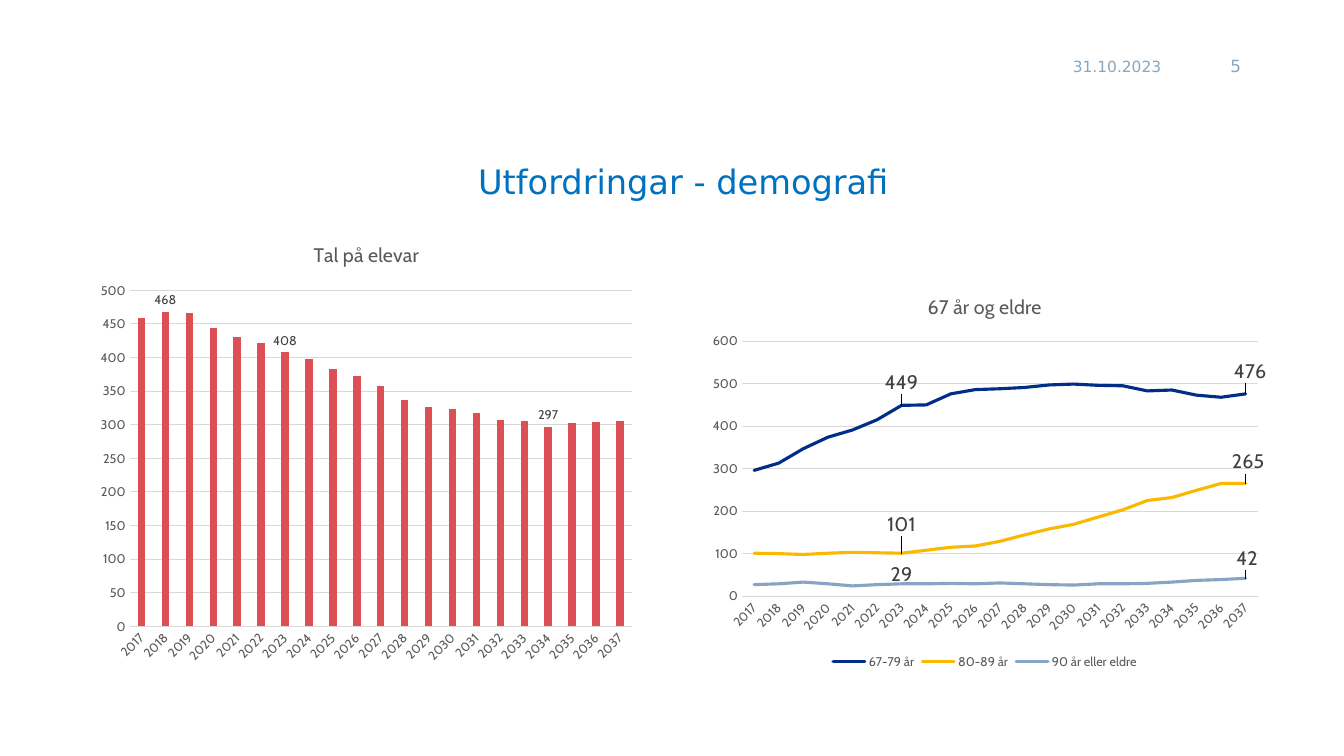
from dataclasses import dataclass, field

from lxml import etree
from pptx import Presentation
from pptx import util as u
from pptx.chart import data as cd
from pptx.dml import color as co
from pptx.enum import chart as ch
from pptx.enum import text as tx
from pptx.oxml import ns

CELL = u.Inches(0.1)
COLS, ROWS = 133.33, 75
GREY, RULE, DARK, SOFT = "595959", "D9D9D9", "404040", "86A7C2"
SANS, CABIN = "DejaVu Sans", "Cabin"
YEARS = [str(y) for y in range(2017, 2038)]
C15 = "http://schemas.microsoft.com/office/drawing/2012/chart"


@dataclass
class Box:
    col: float
    row: float
    wide: float
    high: float

    def place(self) -> tuple:
        return tuple(round(n * CELL) for n in (self.col, self.row, self.wide, self.high))

    def share(self, part: "Box") -> dict:
        return {"x": (part.col - self.col) / self.wide, "y": (part.row - self.row) / self.high,
                "w": part.wide / self.wide, "h": part.high / self.high}


@dataclass
class Mark:
    year: int
    dx: float = 0
    dy: float = 0


@dataclass
class Line:
    name: str
    hue: str
    vals: list = field(default_factory=list)
    marks: list = field(default_factory=list)


@dataclass
class Graph:
    title: str
    box: Box
    plot: Box
    kind: ch.XL_CHART_TYPE
    top: int
    step: int
    size: int
    spot: ch.XL_LABEL_POSITION
    lines: list


def paint(hue: str) -> co.RGBColor:
    return co.RGBColor.from_string(hue)


def style(font, size: float, hue: str, face: str) -> None:
    font.size, font.name, font.bold = u.Pt(size), face, False
    font.color.rgb = paint(hue)


def write(shape, words: str, size: float, hue: str, align, anchor) -> None:
    frame = shape.text_frame
    frame.word_wrap = True
    frame.vertical_anchor = anchor
    par = frame.paragraphs[0]
    par.text, par.alignment = words, align
    style(par.font, size, hue, SANS)


def layout(names: dict) -> etree._Element:
    root = etree.Element(ns.qn("c:layout"))
    hand = etree.SubElement(root, ns.qn("c:manualLayout"))
    for name, val in names.items():
        etree.SubElement(hand, ns.qn("c:" + name)).set("val", str(val))
    return root


def label(ser, line: Line, graph: Graph) -> None:
    ser.data_labels.show_value = False
    for mark in line.marks:
        spot = mark.year - 2017
        tag = ser.points[spot].data_label
        style(tag.font, graph.size, DARK, CABIN)
        tag.position = graph.spot
        if mark.dy:
            idx = ser._element.xpath(f'c:dLbls/c:dLbl/c:idx[@val="{spot}"]')[0]
            idx.addnext(layout({"x": mark.dx / graph.box.wide, "y": mark.dy / graph.box.high}))
    more = etree.SubElement(ser.data_labels._element, ns.qn("c:extLst"))
    ext = etree.SubElement(more, ns.qn("c:ext"), nsmap={"c15": C15})
    ext.set("uri", "{CE6537A1-D6FC-4f65-9D91-7224C49458BB}")
    etree.SubElement(ext, f"{{{C15}}}showLeaderLines").set("val", "1")


def axes(chart, graph: Graph) -> None:
    cat, val = chart.category_axis, chart.value_axis
    for axis in (cat, val):
        axis.major_tick_mark = axis.minor_tick_mark = ch.XL_TICK_MARK.NONE
        style(axis.tick_labels.font, 9, GREY, CABIN)
    cat.format.line.color.rgb = paint(RULE)
    cat.format.line.width = u.Pt(0.75)
    cat._element.find(ns.qn("c:txPr")).find(ns.qn("a:bodyPr")).set("rot", "-2700000")
    val.format.line.fill.background()
    val.minimum_scale, val.maximum_scale, val.major_unit = 0, graph.top, graph.step
    val.tick_labels.number_format = "0"
    val.tick_labels.number_format_is_linked = False
    grid = val.major_gridlines.format.line
    grid.color.rgb, grid.width = paint(RULE), u.Pt(0.75)


def draw(slide, graph: Graph) -> None:
    data = cd.CategoryChartData()
    data.categories = YEARS
    for line in graph.lines:
        data.add_series(line.name, line.vals)
    chart = slide.shapes.add_chart(graph.kind, *graph.box.place(), data).chart
    style(chart.font, 10, "000000", CABIN)
    chart.has_title = True
    par = chart.chart_title.text_frame.paragraphs[0]
    par.text = graph.title
    style(par.font, 14, GREY, CABIN)
    chart.chart_title.include_in_layout = False
    axes(chart, graph)
    plot = chart.plots[0]
    plot.vary_by_categories = False
    bars = graph.kind == ch.XL_CHART_TYPE.COLUMN_CLUSTERED
    if bars:
        plot.gap_width, plot.overlap = 219, -27
    for ser, line in zip(plot.series, graph.lines):
        if bars:
            ser.format.fill.solid()
            ser.format.fill.fore_color.rgb = paint(line.hue)
        else:
            ser.smooth = False
            ser.marker.style = ch.XL_MARKER_STYLE.NONE
            ser.format.line.color.rgb = paint(line.hue)
            ser.format.line.width = u.Pt(2.25)
            ser._element.xpath("c:spPr/a:ln")[0].set("cap", "rnd")
        if line.vals:
            label(ser, line, graph)
        else:
            ser._element.remove(ser._element.find(ns.qn("c:val")))
    chart.has_legend = not bars
    if not bars:
        chart.legend.position = ch.XL_LEGEND_POSITION.BOTTOM
        chart.legend.include_in_layout = False
        style(chart.legend.font, 9, GREY, CABIN)
    area = chart._chartSpace.chart.plotArea
    for old in area.findall(ns.qn("c:layout")):
        area.remove(old)
    modes = {"layoutTarget": "inner", "xMode": "edge", "yMode": "edge"}
    area.insert(0, layout(modes | graph.box.share(graph.plot)))


PUPILS = Graph(
    "Tal på elevar", Box(8.9, 22.2, 54.9, 44.6), Box(12.85, 28.8, 49.85, 33.35),
    ch.XL_CHART_TYPE.COLUMN_CLUSTERED, 500, 50, 9, ch.XL_LABEL_POSITION.OUTSIDE_END,
    [Line("Series 1", "FAB900"),
     Line("Series 2", "559B71"),
     Line("Series 3", "DC4F55",
          [458, 468, 466, 444, 431, 421, 408, 397, 383, 372, 357,
           337, 327, 323, 318, 307, 305, 297, 303, 304, 305],
          [Mark(2018), Mark(2023), Mark(2034)])])

ELDERS = Graph(
    "67 år og eldre", Box(69.5, 27.4, 56.4, 39.4), Box(73.6, 33.85, 51.2, 25.3),
    ch.XL_CHART_TYPE.LINE, 600, 100, 14, ch.XL_LABEL_POSITION.ABOVE,
    [Line("67-79 år", "002D87",
          [296, 313, 347, 374, 391, 415, 449, 450, 476, 486, 488,
           491, 497, 499, 496, 495, 483, 485, 473, 468, 476],
          [Mark(2023, 0, -0.65), Mark(2037, 0.45, -0.65)]),
     Line("80-89 år", "FAB900",
          [101, 100, 98, 101, 103, 102, 101, 108, 115, 118, 129,
           144, 158, 169, 186, 203, 225, 232, 249, 265, 265],
          [Mark(2023, 0, -1.25), Mark(2037, 0.25, -0.55)]),
     Line("90 år eller eldre", "87A5C3",
          [27, 29, 33, 29, 24, 27, 29, 29, 30, 29, 31,
           29, 27, 26, 29, 29, 30, 33, 37, 39, 42],
          [Mark(2023, 0, 0.7), Mark(2037, 0.15, -0.35)])])


def main() -> None:
    deck = Presentation()
    deck.slide_width, deck.slide_height = round(COLS * CELL), ROWS * CELL
    slide = deck.slides.add_slide(deck.slide_layouts[5])
    left, mid, right = tx.PP_ALIGN.LEFT, tx.PP_ALIGN.CENTER, tx.PP_ALIGN.RIGHT
    heart = tx.MSO_ANCHOR.MIDDLE
    head = slide.shapes.title
    head.left, head.top, head.width, head.height = Box(23.8, 15.5, 88, 5).place()
    write(head, "Utfordringar - demografi", 24, "0070C0", mid, tx.MSO_ANCHOR.TOP)
    head.text_frame.auto_size = tx.MSO_AUTO_SIZE.SHAPE_TO_FIT_TEXT
    for box, words, size, align in (
        (Box(105.45, 4.6, 11.5, 4), "31.10.2023", 11, left),
        (Box(118.4, 4.55, 5.7, 4), "5", 12, right),
    ):
        write(slide.shapes.add_textbox(*box.place()), words, size, SOFT, align, heart)
    for graph in (PUPILS, ELDERS):
        draw(slide, graph)
    deck.save("out.pptx")


if __name__ == "__main__":
    main()
